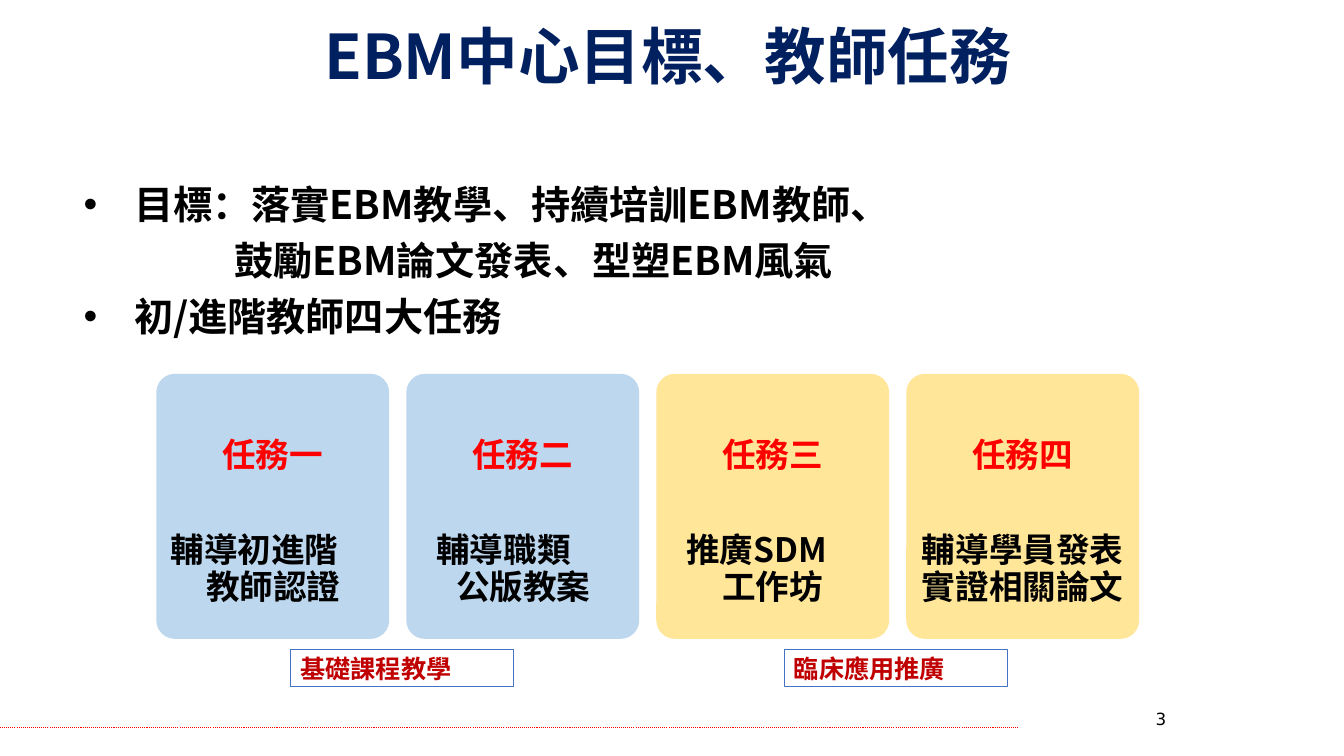
import pptx
import pptx.util
import pptx.dml.color
import pptx.enum.dml
import pptx.enum.shapes
import pptx.enum.text
import pptx.oxml.ns
from lxml import etree

Cm, Pt = pptx.util.Cm, pptx.util.Pt
RGBColor = pptx.dml.color.RGBColor
ALIGN = pptx.enum.text.PP_ALIGN
ANCHOR = pptx.enum.text.MSO_ANCHOR
SHAPE = pptx.enum.shapes.MSO_SHAPE
qn = pptx.oxml.ns.qn

NAVY = RGBColor(0x00, 0x20, 0x60)
BLACK = RGBColor(0x00, 0x00, 0x00)
RED = RGBColor(0xFF, 0x00, 0x00)
DARK_RED = RGBColor(0xC0, 0x00, 0x00)
BORDER_BLUE = RGBColor(0x44, 0x72, 0xC4)
PALE_BLUE = RGBColor(0xBD, 0xD7, 0xEE)
PALE_YELLOW = RGBColor(0xFF, 0xE6, 0x99)
CJK_FONT = "Noto Sans CJK SC"

GOALS = [  # text, left margin and first-line indent in cm
    ("目標：落實EBM教學、持續培訓EBM教師、", 1.27, -1.27),
    ("鼓勵EBM論文發表、型塑EBM風氣", 3.79, 0),
    ("初/進階教師四大任務", 1.27, -1.27),
]
TASKS = [  # heading, text, fill, left margin and first-line indent in cm
    ("任務一", "輔導初進階\v教師認證", PALE_BLUE, 1.0, -0.9),
    ("任務二", "輔導職類\v公版教案", PALE_BLUE, 1.0, -0.5),
    ("任務三", "推廣SDM\v工作坊", PALE_YELLOW, 1.4, -0.9),
    ("任務四", "輔導學員發表實證相關論文", PALE_YELLOW, 0, 0),
]
LABELS = [("基礎課程教學", 7.32), ("臨床應用推廣", 19.76)]


def place(s, left, top, width, height):
    s.left, s.top, s.width, s.height = Cm(left), Cm(top), Cm(width), Cm(height)


def set_frame(tf, anchor, left=0.25, top=0.0, right=0.25):
    tf.word_wrap = True
    tf.auto_size = pptx.enum.text.MSO_AUTO_SIZE.NONE
    tf.vertical_anchor = anchor
    tf.margin_left, tf.margin_top = Cm(left), Cm(top)
    tf.margin_right, tf.margin_bottom = Cm(right), 0


def set_indent(p, margin, first):
    pPr = p._p.get_or_add_pPr()
    pPr.set("marL", str(Cm(margin)))
    pPr.set("indent", str(Cm(first)))


def format_text(p, size, color, align, line_spacing=None):
    """Bold CJK text with exact line spacing."""
    p.alignment = align
    p.space_before = p.space_after = 0
    p.line_spacing = line_spacing and Pt(line_spacing)
    for r in p.runs:
        r.font.size = Pt(size)
        r.font.bold = True
        r.font.color.rgb = color
        r.font.name = CJK_FONT
        latin = r.font._element.find(qn("a:latin"))
        ea = etree.Element(qn("a:ea"), typeface=CJK_FONT)
        latin.addnext(ea)


def fill_title(s):
    place(s, 2.01, 0, 29.64, 2.31)
    set_frame(s.text_frame, ANCHOR.BOTTOM)
    s.text_frame.text = "EBM中心目標、教師任務"
    format_text(s.text_frame.paragraphs[0], 44, NAVY, ALIGN.CENTER)


def fill_goals(s):
    place(s, 1.86, 4.31, 29.87, 4.3)
    tf = s.text_frame
    set_frame(tf, ANCHOR.TOP)
    tf.text = "\n".join(text for text, _, _ in GOALS)
    for p, (_, margin, first) in zip(tf.paragraphs, GOALS):
        set_indent(p, margin, first)
        format_text(p, 28, BLACK, ALIGN.LEFT, 40)
        if not first:
            etree.SubElement(p._p.pPr, qn("a:buNone"))


def add_box(slide, kind, left, top, width, height):
    s = slide.shapes.add_shape(kind, Cm(left), Cm(top), Cm(width), Cm(height))
    s.shadow.inherit = False
    return s


def add_task(slide, left, heading, text, fill, margin, first):
    s = add_box(slide, SHAPE.ROUNDED_RECTANGLE, left, 9.42, 5.87, 6.68)
    s.adjustments[0] = 0.08
    s.fill.solid()
    s.fill.fore_color.rgb = fill
    s.line.fill.background()
    tf = s.text_frame
    set_frame(tf, ANCHOR.TOP, 0.12, 1.47, 0.12)
    tf.text = heading
    p = tf.paragraphs[0]
    format_text(p, 24, RED, ALIGN.CENTER, 26.4)
    p.space_after = Pt(41.4)
    p = tf.add_paragraph()
    p.text = text
    set_indent(p, margin, first)
    format_text(p, 24, BLACK, ALIGN.LEFT if first else ALIGN.CENTER, 26.4)


def add_label(slide, text, left):
    s = add_box(slide, SHAPE.RECTANGLE, left, 16.37, 5.62, 0.94)
    s.fill.background()
    s.line.color.rgb = BORDER_BLUE
    s.line.width = Pt(0.75)
    set_frame(s.text_frame, ANCHOR.MIDDLE)
    s.text_frame.text = text
    format_text(s.text_frame.paragraphs[0], 18, DARK_RED, ALIGN.LEFT, 22)


def add_footer(slide):
    line = slide.shapes.add_connector(
        pptx.enum.shapes.MSO_CONNECTOR.STRAIGHT, 0, Cm(18.34), Cm(25.68), Cm(18.34))
    line.line.color.rgb = RED
    line.line.width = Pt(0.75)
    line.line.dash_style = pptx.enum.dml.MSO_LINE.ROUND_DOT
    etree.SubElement(line._element.spPr, qn("a:effectLst"))

    s = slide.shapes.add_textbox(Cm(24.13), Cm(17.73), Cm(5.51), Cm(1.32))
    set_frame(s.text_frame, ANCHOR.TOP, top=0.13)
    s.text_frame.text = "3"
    p = s.text_frame.paragraphs[0]
    p.alignment = ALIGN.RIGHT
    font = p.runs[0].font
    font.name, font.size = "DejaVu Sans", Pt(12)
    font.color.rgb = BLACK


def main():
    prs = pptx.Presentation()
    prs.slide_width, prs.slide_height = Cm(33.87), Cm(19.05)
    slide = prs.slides.add_slide(prs.slide_layouts[1])
    fill_title(slide.shapes.title)
    fill_goals(slide.placeholders[1])
    for i, task in enumerate(TASKS):
        add_task(slide, 3.94 + 6.3 * i, *task)
    for text, left in LABELS:
        add_label(slide, text, left)
    add_footer(slide)
    prs.save("out.pptx")


if __name__ == "__main__":
    main()
